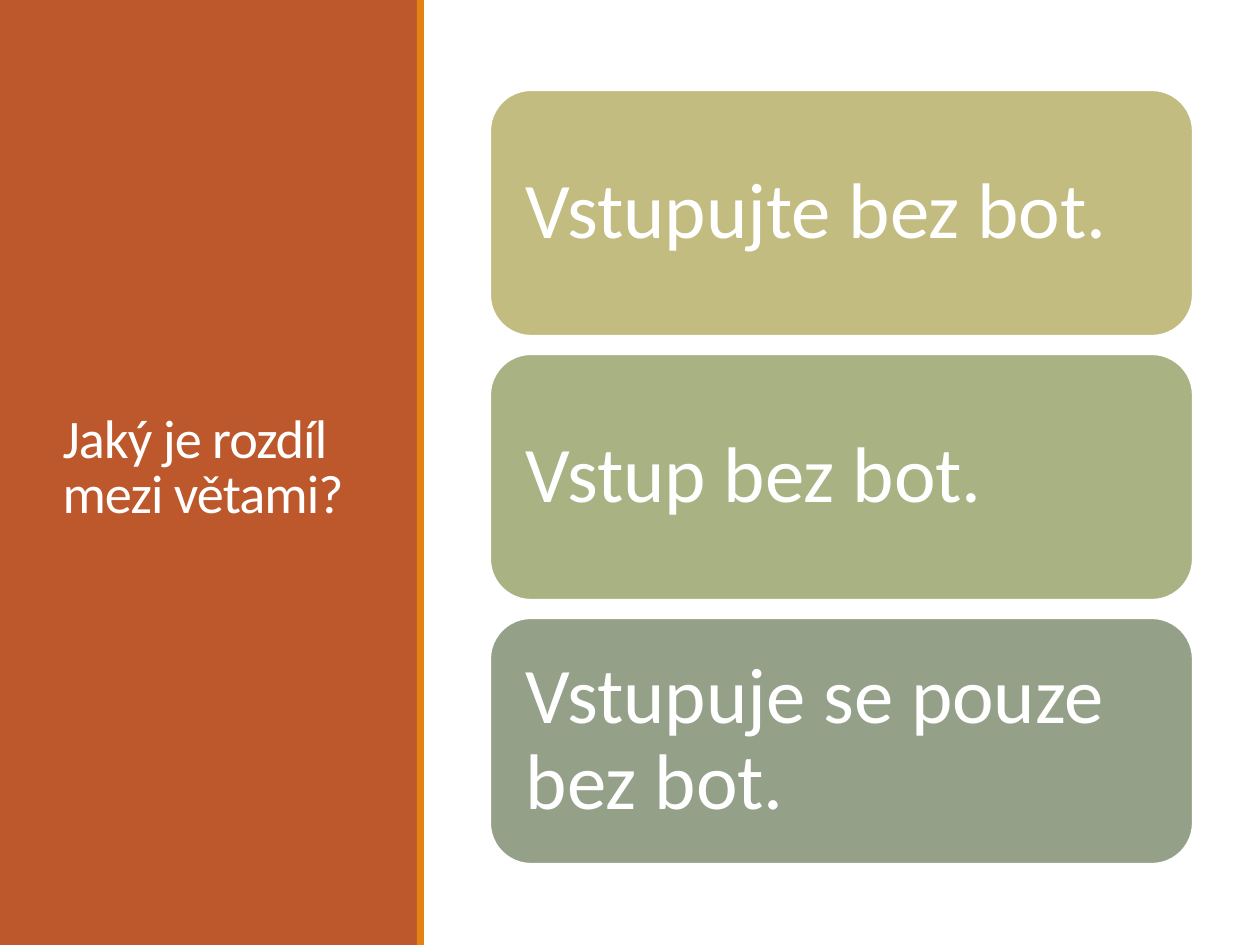
import dataclasses

import pptx
import pptx.dml.color
import pptx.enum.shapes
import pptx.enum.text
import pptx.util

EMU_PER_PX = 914400 / 126
SHAPE = pptx.enum.shapes.MSO_SHAPE


@dataclasses.dataclass(frozen=True)
class Theme:
    font: str = "Calibri"
    text: str = "FFFFFF"
    panel: str = "BD582C"
    accent: str = "E48312"
    outline: str = "FFFFFF"
    outline_width: float = 1.25
    cards: tuple = ("C2BC80", "A8B283", "94A088")
    title_size: int = 31
    card_size: int = 45


THEME = Theme()
TITLE = "Jaký je rozdíl mezi větami?"
SENTENCES = ("Vstupujte bez bot.", "Vstup bez bot.", "Vstupuje se pouze bez bot.")


def px(n):
    return pptx.util.Emu(round(n * EMU_PER_PX))


def rgb(value):
    return pptx.dml.color.RGBColor.from_string(value)


def apply(target, values):
    for name, value in values.items():
        setattr(target, name, value)


def add_block(s, kind, box, fill):
    """Add a filled shape with neither line nor shadow."""
    sp = s.shapes.add_shape(kind, *map(px, box))
    sp.shadow.inherit = False
    sp.fill.solid()
    sp.fill.fore_color.rgb = rgb(fill)
    sp.line.fill.background()
    return sp


def write_text(sp, text, size, line_spacing, frame):
    """Write one left-aligned, vertically centred paragraph and return its run."""
    tf = sp.text_frame
    apply(tf, {
        "word_wrap": True,
        "auto_size": pptx.enum.text.MSO_AUTO_SIZE.NONE,
        "vertical_anchor": pptx.enum.text.MSO_ANCHOR.MIDDLE,
        **frame,
    })
    p = tf.paragraphs[0]
    apply(p, {"alignment": pptx.enum.text.PP_ALIGN.LEFT, "line_spacing": line_spacing})
    r = p.add_run()
    r.text = text
    apply(r.font, {"name": THEME.font, "size": pptx.util.Pt(size)})
    r.font.color.rgb = rgb(THEME.text)
    return r


def place_title(s, box):
    title = s.shapes.title
    apply(title, dict(zip(("left", "top", "width", "height"), map(px, box))))
    r = write_text(title, TITLE, THEME.title_size, 0.85, {})
    r.font.element.set("spc", "-50") if hasattr(r.font, "element") else r.font._element.set("spc", "-50")


def add_card(s, box, fill, text):
    sp = add_block(s, SHAPE.ROUNDED_RECTANGLE, box, fill)
    sp.line.color.rgb = rgb(THEME.outline)
    sp.line.width = pptx.util.Pt(THEME.outline_width)
    sides = ("left", "top", "right", "bottom")
    write_text(sp, text, THEME.card_size, 0.9, {f"margin_{side}": px(24) for side in sides})


def main():
    prs = pptx.Presentation()
    apply(prs, {"slide_width": px(1260), "slide_height": px(945)})
    s = prs.slides.add_slide(prs.slide_layouts[5])

    panel = add_block(s, SHAPE.RECTANGLE, (0, 0, 418, 945), THEME.panel)
    s.shapes.title.element.addprevious(panel.element)
    place_title(s, (50, 72, 319, 795))
    add_block(s, SHAPE.RECTANGLE, (417, 0, 7, 945), THEME.accent)

    top, height, gap = 90, 246, 18
    for i, (text, fill) in enumerate(zip(SENTENCES, THEME.cards)):
        add_card(s, (490, top + i * (height + gap), 703, height), fill, text)

    prs.save("out.pptx")


if __name__ == "__main__":
    main()
